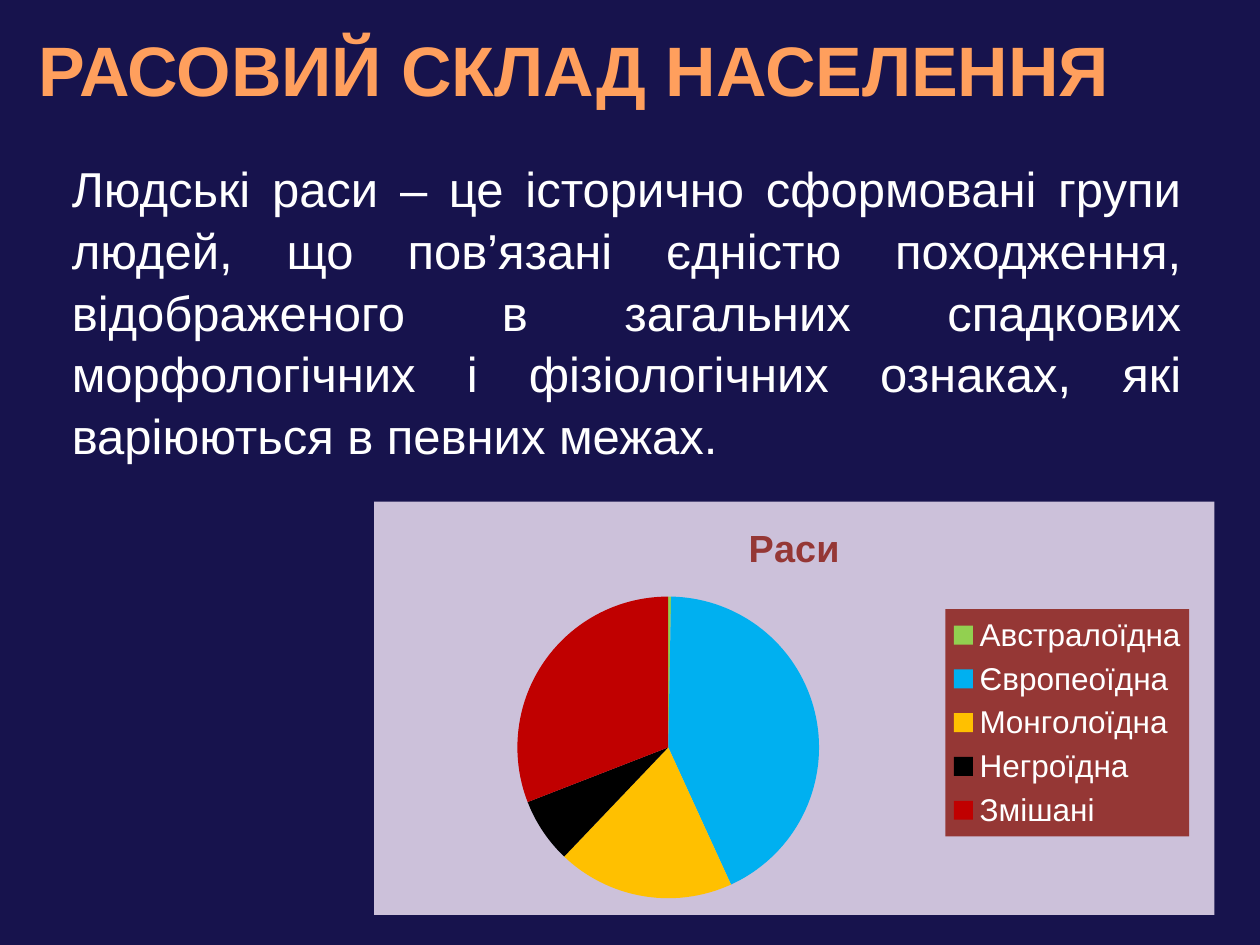
import pptx
import pptx.chart.data
import pptx.dml.color
import pptx.enum.chart
import pptx.enum.text
import pptx.oxml
import pptx.oxml.ns
import pptx.util

Pt = pptx.util.Pt
ALIGN = pptx.enum.text.PP_ALIGN
FONT = "Arial"
COLORS = {
    "background": "17134D",
    "heading": "FF9F5D",
    "text": "FFFFFF",
    "panel": "CCC1DA",
    "accent": "953735",
}
# Race: (share in percent, slice colour)
RACES = {
    "Австралоїдна": (0.3, "92D050"),
    "Європеоїдна": (43, "00B0F0"),
    "Монголоїдна": (19, "FFC000"),
    "Негроїдна": (7, "000000"),
    "Змішані": (31, "C00000"),
}
DEFINITION = (
    "Людські раси – це історично сформовані групи людей, що пов’язані "
    "єдністю походження, відображеного в загальних спадкових морфологічних "
    "і фізіологічних ознаках, які варіюються в певних межах."
)


def rgb(value):
    return pptx.dml.color.RGBColor.from_string(value)


def set_fill(fill, color):
    fill.solid()
    fill.fore_color.rgb = rgb(color)


def set_font(font, size, color, bold=False):
    font.name = FONT
    font.size = Pt(size)
    font.bold = bold
    font.color.rgb = rgb(color)


def add_text(s, box, text, size, color, align, bold=False, wrap=True, spacing=1.0):
    sp = s.shapes.add_textbox(*map(Pt, box))
    tf = sp.text_frame
    tf.word_wrap = wrap
    p = tf.paragraphs[0]
    p.text = text
    p.alignment = align
    p.line_spacing = spacing
    set_font(p.runs[0].font, size, color, bold)
    return sp


def layout_xml(x, y, w, h, inner=False):
    """Manual chart layout, in fractions of the chart area."""
    target = '<c:layoutTarget val="inner"/>' if inner else ""
    modes = '<c:xMode val="edge"/><c:yMode val="edge"/>'
    sizes = "".join(
        f'<c:{tag} val="{value}"/>' for tag, value in zip("xywh", (x, y, w, h))
    )
    return pptx.oxml.parse_xml(
        f'<c:layout {pptx.oxml.ns.nsdecls("c")}><c:manualLayout>'
        f"{target}{modes}{sizes}</c:manualLayout></c:layout>"
    )


def fill_xml(color):
    return pptx.oxml.parse_xml(
        f'<c:spPr {pptx.oxml.ns.nsdecls("c", "a")}><a:solidFill>'
        f'<a:srgbClr val="{color}"/></a:solidFill></c:spPr>'
    )


def set_layout(element, layout):
    for old in element.findall(pptx.oxml.ns.qn("c:layout")):
        element.remove(old)
    element.insert(0, layout)


def add_pie(s, box, title, data):
    cd = pptx.chart.data.CategoryChartData()
    cd.categories = list(data)
    cd.add_series(title, [share for share, _ in data.values()])
    kind = pptx.enum.chart.XL_CHART_TYPE.PIE
    chart = s.shapes.add_chart(kind, *map(Pt, box), cd).chart
    set_font(chart.font, 18, COLORS["text"])

    # Title
    chart.has_title = True
    p = chart.chart_title.text_frame.paragraphs[0]
    p.text = title
    set_font(p.runs[0].font, 21.6, COLORS["accent"], True)

    # Slices
    plot = chart.plots[0]
    plot.vary_by_categories = True
    for i, (_, color) in enumerate(data.values()):
        set_fill(plot.series[0].points[i].format.fill, color)
    plot_area = chart.element.chart.plotArea
    set_layout(plot_area, layout_xml(0.17, 0.23, 0.36, 0.73, inner=True))

    # Legend on its own coloured panel
    chart.has_legend = True
    legend = chart.legend
    legend.position = pptx.enum.chart.XL_LEGEND_POSITION.RIGHT
    legend.include_in_layout = False
    set_font(legend.font, 18, COLORS["text"])
    el = legend._element
    for old in el.findall(pptx.oxml.ns.qn("c:layout")):
        el.remove(old)
    pos = el.find(pptx.oxml.ns.qn("c:legendPos"))
    pos.addnext(layout_xml(0.68, 0.26, 0.29, 0.55))
    el.find(pptx.oxml.ns.qn("c:txPr")).addprevious(fill_xml(COLORS["accent"]))

    # Chart background
    chart.element.chart.addnext(fill_xml(COLORS["panel"]))


def main():
    prs = pptx.Presentation()
    prs.slide_width, prs.slide_height = Pt(720), Pt(540)
    s = prs.slides.add_slide(prs.slide_layouts[6])
    set_fill(s.background.fill, COLORS["background"])

    # Definition
    body = add_text(s, (34, 84, 648, 178), DEFINITION, 28, COLORS["text"],
                    ALIGN.JUSTIFY, spacing=1.05)
    body.text_frame.margin_top = Pt(5)

    # Heading
    add_text(s, (11.5, 11.5, 633, 55.5), "РАСОВИЙ СКЛАД НАСЕЛЕННЯ", 40,
             COLORS["heading"], ALIGN.CENTER, bold=True, wrap=False)

    # Shares of the races
    add_pie(s, (213.8, 286.6, 480.2, 236.2), "Раси", RACES)
    prs.save("out.pptx")


if __name__ == "__main__":
    main()
